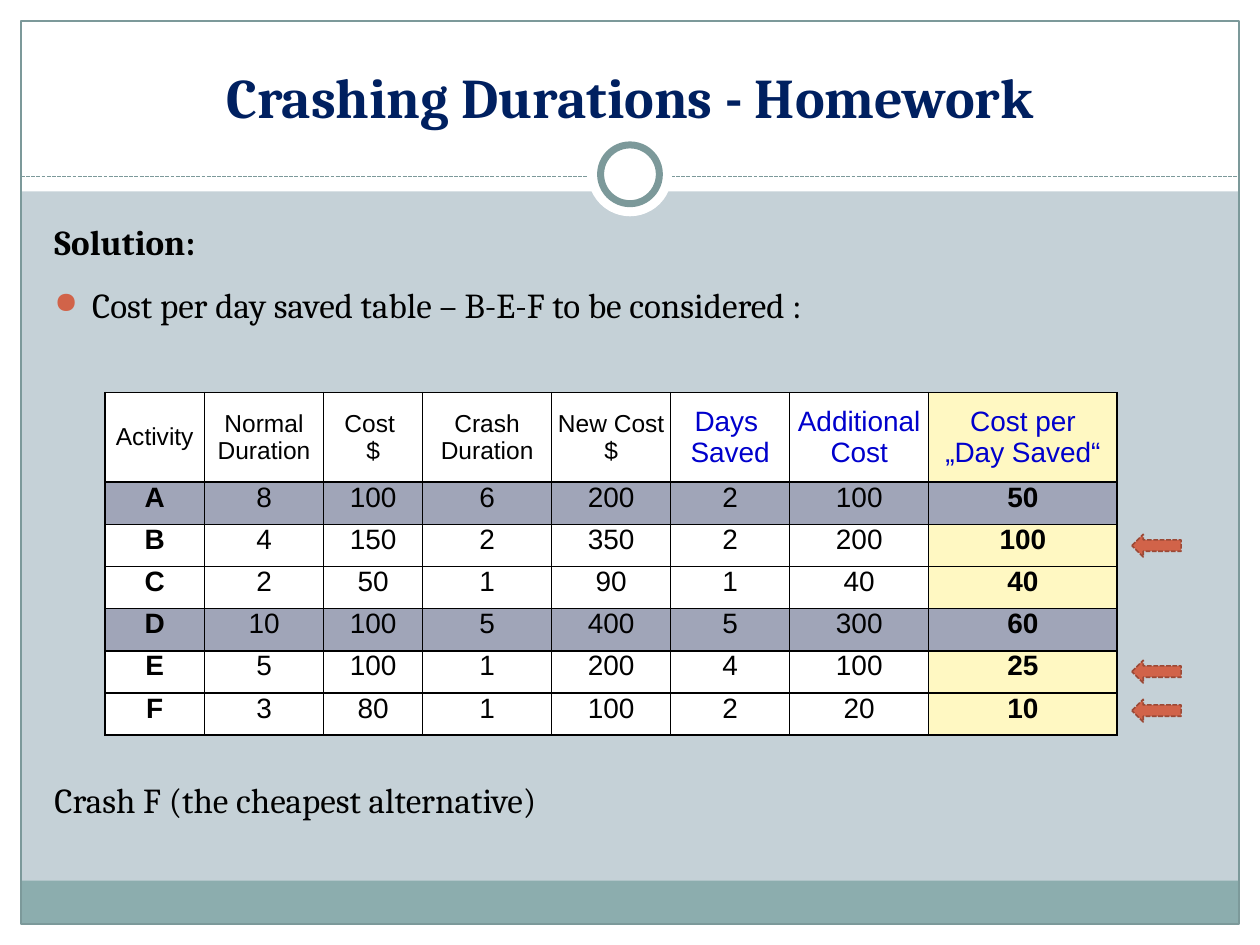
from pptx import Presentation
from pptx.dml.color import RGBColor
from pptx.enum.dml import MSO_LINE_DASH_STYLE as Dash
from pptx.enum.shapes import MSO_CONNECTOR as Connector, MSO_SHAPE as Preset
from pptx.enum.text import MSO_ANCHOR as Anchor, MSO_AUTO_SIZE as AutoSize, PP_ALIGN as Align
from pptx.oxml import parse_xml
from pptx.oxml.ns import nsdecls
from pptx.util import Inches, Pt

WHITE = RGBColor(0xFF, 0xFF, 0xFF)
BLACK = RGBColor(0, 0, 0)
NAVY = RGBColor(0x00, 0x20, 0x60)
BLUE = RGBColor(0x00, 0x00, 0xCC)
MIST = RGBColor(0xC5, 0xD1, 0xD7)
TEAL = RGBColor(0x8C, 0xAD, 0xAE)
SLATE = RGBColor(0x7C, 0x99, 0x9A)
CREAM = RGBColor(0xFF, 0xF8, 0xC2)
GREY = RGBColor(0xA0, 0xA5, 0xB8)
RUST = RGBColor(0xD1, 0x63, 0x49)
DARK_RUST = RGBColor(0x9B, 0x49, 0x36)

COLUMNS, ROWS = 60, 45
COLUMN_WIDTHS = [4.74, 5.67, 4.72, 6.14, 5.67, 5.67, 6.62, 8.97]
HEADER_HEIGHT, ROW_HEIGHT = 4.26, 2.01
HEADERS = ["Activity", "Normal Duration", "Cost \n$", "Crash Duration", "New Cost \n$",
           "Days \nSaved", "Additional \nCost", "Cost per\n„Day Saved“"]
ACTIVITIES = [
    ["A", 8, 100, 6, 200, 2, 100, 50],
    ["B", 4, 150, 2, 350, 2, 200, 100],
    ["C", 2, 50, 1, 90, 1, 40, 40],
    ["D", 10, 100, 5, 400, 5, 300, 60],
    ["E", 5, 100, 1, 200, 4, 100, 25],
    ["F", 3, 80, 1, 100, 2, 20, 10],
]
SHADED_ACTIVITIES = "AD"
FIRST_COMPUTED = 5
LAST = len(HEADERS) - 1


def write(frame, text, font="Cambria", size=20, color=BLACK, bold=False,
          align=Align.LEFT, before=0, after=0):
    """Add one paragraph per line of text and return the last one."""
    for line in text.split("\n"):
        paragraph = frame.paragraphs[-1]
        if paragraph.runs:
            paragraph = frame.add_paragraph()
        paragraph.alignment = align
        paragraph.space_before, paragraph.space_after = Pt(before), Pt(after)
        run = paragraph.add_run()
        run.text = line
        run.font.name, run.font.size, run.font.bold = font, Pt(size), bold
        run.font.color.rgb = color
    return paragraph


def add_bullet(paragraph):
    properties = paragraph._p.get_or_add_pPr()
    properties.set("marL", str(Inches(0.3)))
    properties.set("indent", str(-Inches(0.3)))
    for bullet_part in (f'<a:buClr {nsdecls("a")}><a:srgbClr val="{RUST}"/></a:buClr>',
                        f'<a:buSzPct {nsdecls("a")} val="85000"/>',
                        f'<a:buChar {nsdecls("a")} char="●"/>'):
        properties.append(parse_xml(bullet_part))


def add_borders(cell):
    properties = cell._tc.get_or_add_tcPr()
    for side in "LRTB":
        properties.append(parse_xml(
            f'<a:ln{side} {nsdecls("a")} w="{Pt(1)}"><a:solidFill>'
            f'<a:srgbClr val="{BLACK}"/></a:solidFill></a:ln{side}>'))


class SlideBuilder:
    """Places elements on a 60 by 45 grid of the slide."""

    def __init__(self, presentation):
        self.column = presentation.slide_width / COLUMNS
        self.row = presentation.slide_height / ROWS
        self.slide = presentation.slides.add_slide(presentation.slide_layouts[5])
        self.shapes = self.slide.shapes
        background = self.slide.background.fill
        background.solid()
        background.fore_color.rgb = MIST

    def box(self, left, top, width, height):
        return (round(left * self.column), round(top * self.row),
                round(width * self.column), round(height * self.row))

    def style_line(self, line, color, width, dash=None):
        line.color.rgb, line.width = color, Pt(width)
        if dash:
            line.dash_style = dash

    def shape(self, preset, *place, fill=None, line=None):
        shape = self.shapes.add_shape(preset, *self.box(*place))
        shape.shadow.inherit = False
        if fill is None:
            shape.fill.background()
        else:
            shape.fill.solid()
            shape.fill.fore_color.rgb = fill
        if line:
            self.style_line(shape.line, *line)
        else:
            shape.line.fill.background()

    def rule(self, left, right, top):
        start_x, y, end_x, _ = self.box(left, top, right, 0)
        connector = self.shapes.add_connector(Connector.STRAIGHT, start_x, y, end_x, y)
        self.style_line(connector.line, SLATE, 0.75, Dash.SQUARE_DOT)
        connector._element.spPr.append(parse_xml(f'<a:effectLst {nsdecls("a")}/>'))

    def title(self, text, *place):
        """Fill the title placeholder and bring it in front of the band."""
        title = self.shapes.title
        title.left, title.top, title.width, title.height = self.box(*place)
        frame = title.text_frame
        frame.auto_size, frame.vertical_anchor = AutoSize.NONE, Anchor.BOTTOM
        write(frame, text, size=32, color=NAVY, bold=True, align=Align.CENTER)
        title.element.getparent().append(title.element)

    def text_box(self, *place):
        frame = self.shapes.add_textbox(*self.box(*place)).text_frame
        frame.word_wrap = True
        return frame

    def cell(self, cell, text, fill, anchor, **text_format):
        cell.margin_left = cell.margin_right = Inches(0.05)
        cell.margin_top = cell.margin_bottom = 0
        cell.vertical_anchor = anchor
        add_borders(cell)
        cell.fill.solid()
        cell.fill.fore_color.rgb = fill
        write(cell.text_frame, text, font="Arial", align=Align.CENTER, **text_format)

    def cost_table(self, left, top):
        height = HEADER_HEIGHT + ROW_HEIGHT * len(ACTIVITIES)
        place = self.box(left, top, sum(COLUMN_WIDTHS), height)
        table = self.shapes.add_table(len(ACTIVITIES) + 1, len(HEADERS), *place).table
        for column, width in zip(table.columns, COLUMN_WIDTHS):
            column.width = round(width * self.column)
        for index, row in enumerate(table.rows):
            row.height = round((ROW_HEIGHT if index else HEADER_HEIGHT) * self.row)
        for index, header in enumerate(HEADERS):
            computed = index >= FIRST_COMPUTED
            self.cell(table.cell(0, index), header, CREAM if index == LAST else WHITE,
                      Anchor.MIDDLE, size=16 if computed else 14,
                      color=BLUE if computed else BLACK)
        for row_index, activity in enumerate(ACTIVITIES, 1):
            shaded = activity[0] in SHADED_ACTIVITIES
            for index, value in enumerate(activity):
                fill = GREY if shaded else CREAM if index == LAST else WHITE
                self.cell(table.cell(row_index, index), str(value), fill, Anchor.TOP,
                          size=16, bold=index in (0, LAST))


def main():
    presentation = Presentation()
    presentation.slide_width, presentation.slide_height = Inches(10), Inches(7.5)
    builder = SlideBuilder(presentation)

    for margin in ((0, 44, 60, 1), (0, 0, 60, 9.12), (0, 0, 1, 45), (59, 0, 1, 45)):
        builder.shape(Preset.RECTANGLE, *margin, fill=WHITE)
    builder.shape(Preset.RECTANGLE, 1, 41.94, 58, 2.06, fill=TEAL)
    builder.shape(Preset.RECTANGLE, 1, 1, 58, 43, line=(SLATE, 0.75))
    builder.rule(1, 59, 8.4)
    builder.shape(Preset.OVAL, 28, 6.3, 4, 4, fill=WHITE)
    builder.shape(Preset.OVAL, 28.6, 6.9, 2.8, 2.8, fill=WHITE, line=(SLATE, 4))
    builder.title("Crashing Durations - Homework", 2, 1.5, 56, 5)

    body = builder.text_box(2, 10.2, 56.2, 30)
    write(body, "Solution:", bold=True, after=12)
    add_bullet(write(body, "Cost per day saved table – B-E-F to be considered :", after=12))
    write(body, "Crash F (the cheapest alternative)", before=247)

    builder.cost_table(5, 18.7)
    for top in (25.44, 31.44, 33.3):
        builder.shape(Preset.LEFT_ARROW, 53.9, top, 2.34, 1.08, fill=RUST,
                      line=(DARK_RUST, 0.9, Dash.SQUARE_DOT))
    presentation.save("out.pptx")


if __name__ == "__main__":
    main()
